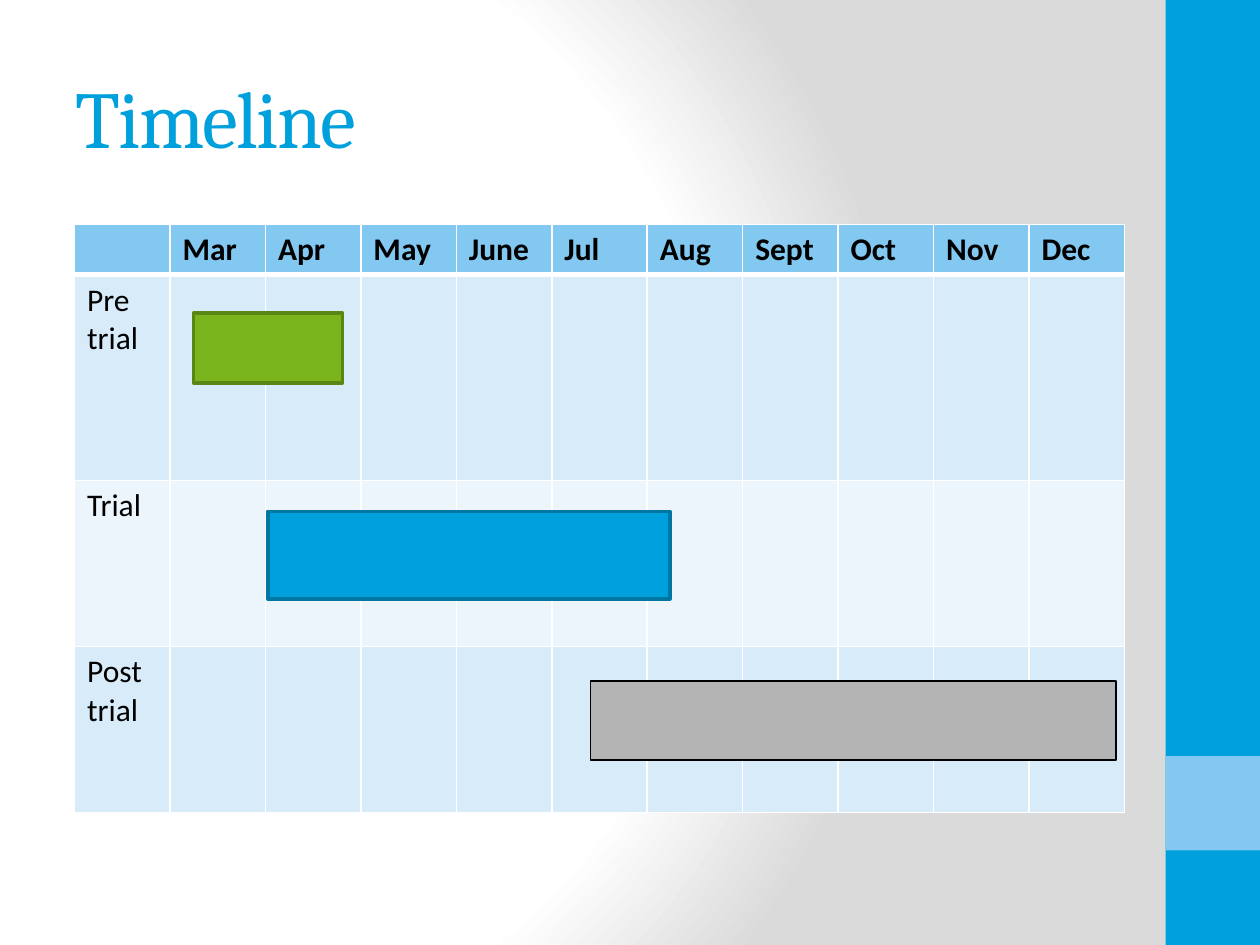
from dataclasses import dataclass

from lxml import etree
from pptx import Presentation
from pptx.dml.color import RGBColor
from pptx.enum.shapes import MSO_SHAPE
from pptx.enum.text import MSO_ANCHOR
from pptx.oxml import parse_xml
from pptx.oxml.ns import nsdecls, qn
from pptx.util import Pt

RECTANGLE = MSO_SHAPE.RECTANGLE
MIDDLE = MSO_ANCHOR.MIDDLE


@dataclass(frozen=True)
class Theme:
    """Colours, fonts and type sizes of the slide."""
    white: str = "FFFFFF"
    shade: str = "DADADA"
    black: str = "000000"
    blue: str = "00A0DC"
    dark_blue: str = "0076A3"
    light_blue: str = "82C8F0"
    band_odd: str = "D8EBF9"
    band_even: str = "EDF5FC"
    green: str = "7AB51D"
    dark_green: str = "5A8615"
    grey: str = "B4B4B4"
    title_font: str = "Cambria"
    body_font: str = "Calibri"
    title_size: int = 46
    body_size: int = 18


THEME = Theme()
MONTHS = ["Mar", "Apr", "May", "June", "Jul", "Aug", "Sept", "Oct", "Nov", "Dec"]
PHASES = ["Pre trial", "Trial", "Post trial"]
ROW_HEIGHTS = [28.8, 117.6, 94.8, 94.8]
PHASE_BARS = [
    ((110.6, 179, 85.2, 39.8), THEME.green, THEME.dark_green, 2),
    ((337.4, 389.1, 300.5, 45.2), THEME.grey, THEME.black, 1),
    ((153, 292.3, 229.8, 50), THEME.blue, THEME.dark_blue, 2),
]


def style_font(font, name, size, color, bold=False):
    """Apply typeface, size, colour and weight to a font."""
    font.name = name
    font.size = Pt(size)
    font.bold = bold
    font.color.rgb = RGBColor.from_string(color)


def set_background(slide):
    """Fill the background with a circular gradient."""
    slide.background.fill.solid()
    properties = slide.element.find(".//" + qn("p:bgPr"))
    stops = "".join(
        f'<a:gs pos="{position * 1000}"><a:srgbClr val="{color}"/></a:gs>'
        for position, color in [(0, THEME.white), (75, THEME.white), (100, THEME.shade)]
    )
    gradient = parse_xml(
        f'<a:gradFill {nsdecls("a")} rotWithShape="1"><a:gsLst>{stops}</a:gsLst>'
        '<a:path path="circle"><a:fillToRect l="20000" t="50000" r="100000" b="50000"/>'
        "</a:path></a:gradFill>"
    )
    properties.replace(properties.find(qn("a:solidFill")), gradient)


def add_rectangle(slide, box, fill, line=None, line_width=0):
    """Add a flat rectangle, outlined when a line colour is given."""
    shape = slide.shapes.add_shape(RECTANGLE, *map(Pt, box))
    shape.shadow.inherit = False
    shape.fill.solid()
    shape.fill.fore_color.rgb = RGBColor.from_string(fill)
    if line:
        shape.line.color.rgb = RGBColor.from_string(line)
        shape.line.width = Pt(line_width)
    else:
        shape.line.fill.background()


def add_title(slide, text):
    """Add the slide title with slightly tightened letters."""
    shape = slide.shapes.add_textbox(Pt(36), Pt(21.6), Pt(600), Pt(90))
    frame = shape.text_frame
    frame.word_wrap = True
    frame.vertical_anchor = MIDDLE
    paragraph = frame.paragraphs[0]
    run = paragraph.add_run()
    run.text = text
    style_font(paragraph.font, THEME.title_font, THEME.title_size, THEME.blue)
    run.font._element.set("spc", "-100")


def set_borders(cell, bottom_width):
    """Draw white borders around a cell."""
    properties = cell._tc.get_or_add_tcPr()
    widths = [("lnL", 1), ("lnR", 1), ("lnT", 1), ("lnB", bottom_width)]
    for index, (side, width) in enumerate(widths):
        line = etree.Element(qn(f"a:{side}"), w=str(Pt(width)))
        fill = etree.SubElement(line, qn("a:solidFill"))
        etree.SubElement(fill, qn("a:srgbClr"), val=THEME.white)
        properties.insert(index, line)


def style_cell(cell, text, fill, header):
    """Write and format one table cell."""
    cell.text = text
    cell.fill.solid()
    cell.fill.fore_color.rgb = RGBColor.from_string(fill)
    style_font(cell.text_frame.paragraphs[0].font, THEME.body_font,
               THEME.body_size, THEME.black, header)
    set_borders(cell, 3 if header else 1)


def add_schedule(slide):
    """Add the table of phases by month."""
    rows = [["", *MONTHS]] + [[phase] + [""] * len(MONTHS) for phase in PHASES]
    fills = [THEME.light_blue, THEME.band_odd, THEME.band_even, THEME.band_odd]
    table = slide.shapes.add_table(
        len(rows), len(rows[0]), Pt(42.6), Pt(128.2), Pt(600), Pt(sum(ROW_HEIGHTS))
    ).table
    for column in table.columns:
        column.width = Pt(600 / len(rows[0]))
    for row_index, (texts, fill, height) in enumerate(zip(rows, fills, ROW_HEIGHTS)):
        table.rows[row_index].height = Pt(height)
        for column_index, text in enumerate(texts):
            style_cell(table.cell(row_index, column_index), text, fill, row_index == 0)


def main():
    """Build and save the timeline slide."""
    presentation = Presentation()
    presentation.slide_width = Pt(720)
    presentation.slide_height = Pt(540)
    slide = presentation.slides.add_slide(presentation.slide_layouts[6])
    set_background(slide)
    add_rectangle(slide, (666, 0, 54, 540), THEME.blue)
    add_rectangle(slide, (666, 432, 54, 54), THEME.light_blue)
    add_title(slide, "Timeline")
    add_schedule(slide)
    for bar in PHASE_BARS:
        add_rectangle(slide, *bar)
    presentation.save("out.pptx")


if __name__ == "__main__":
    main()
